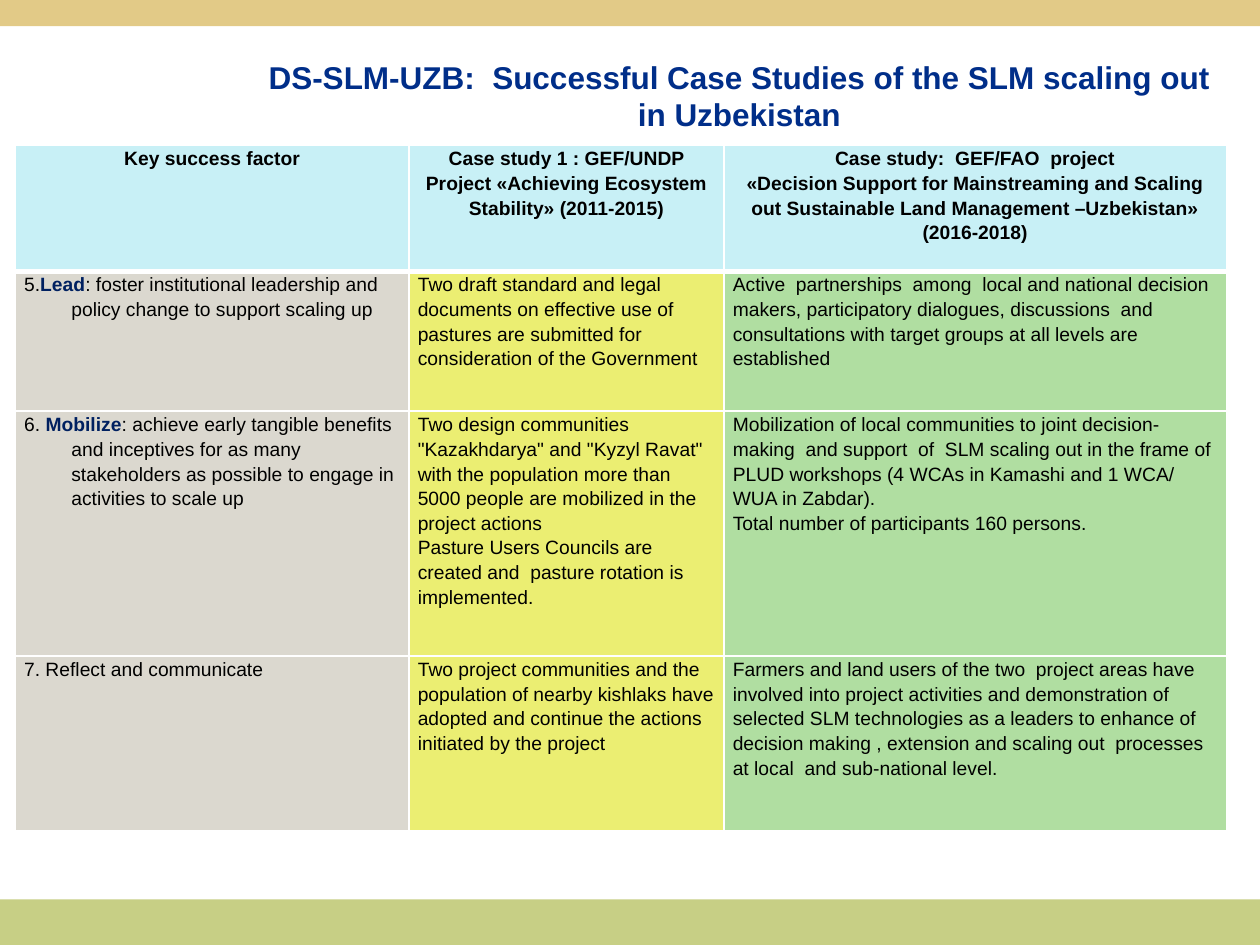
from lxml import etree
from pptx import Presentation
from pptx.dml.color import RGBColor
from pptx.enum.shapes import MSO_SHAPE
from pptx.enum.text import MSO_ANCHOR, PP_ALIGN
from pptx.oxml.ns import qn
from pptx.util import Pt

RECTANGLE = MSO_SHAPE.RECTANGLE
CENTER, LEFT = PP_ALIGN.CENTER, PP_ALIGN.LEFT
MIDDLE, TOP = MSO_ANCHOR.MIDDLE, MSO_ANCHOR.TOP

SAND = RGBColor(0xE2, 0xCA, 0x87)
OLIVE = RGBColor(0xC7, 0xCF, 0x85)
TITLE_BLUE = RGBColor(0x00, 0x2E, 0x89)
KEYWORD_BLUE = RGBColor(0x00, 0x20, 0x60)
BLACK = RGBColor(0x00, 0x00, 0x00)
WHITE = RGBColor(0xFF, 0xFF, 0xFF)
HEADER_CYAN = RGBColor(0xC8, 0xF0, 0xF6)
FACTOR_GREY = RGBColor(0xDB, 0xD8, 0xCF)
CASE_YELLOW = RGBColor(0xEB, 0xEE, 0x72)
CASE_GREEN = RGBColor(0xB0, 0xDE, 0xA1)

FONT = "Arial"
COLUMN_FILLS = (FACTOR_GREY, CASE_YELLOW, CASE_GREEN)
COLUMN_WIDTHS = (225, 180, 287)
ROW_HEIGHTS = (72, 80, 140, 100)
HANGING_INDENT = Pt(27)

TITLE = "DS-SLM-UZB:  Successful Case Studies of the SLM scaling out in Uzbekistan"
HEADERS = (
    [["Key success factor"]],
    [["Case study 1 : GEF/UNDP Project «Achieving Ecosystem Stability» (2011-2015)"]],
    [["Case study:  GEF/FAO  project"],
     ["«Decision Support for Mainstreaming and Scaling out Sustainable Land "
      "Management –Uzbekistan» (2016-2018)"]],
)
FACTORS = (
    ([["5.", "Lead", ": foster institutional leadership and policy change to support "
       "scaling up"]],
     [["Two draft standard and legal  documents on effective use of pastures are "
       "submitted for consideration of the Government"]],
     [["Active  partnerships  among  local and national decision makers, participatory "
       "dialogues, discussions  and consultations with target groups at all levels are "
       "established"]]),
    ([["6. ", "Mobilize", ": achieve early tangible benefits and inceptives for as many "
       "stakeholders as possible to engage in activities to scale up"]],
     [["Two design communities \"Kazakhdarya\" and \"Kyzyl Ravat\" with the population "
       "more than 5000 people are mobilized in the project actions"],
      ["Pasture Users Councils are created and  pasture rotation is implemented."]],
     [["Mobilization of local communities to joint decision-making  and support  of  SLM "
       "scaling out in the frame of  PLUD workshops (4 WCAs in Kamashi and 1 WCA/ WUA in "
       "Zabdar)."],
      ["Total number of participants 160 persons."]]),
    ([["7. Reflect and communicate"]],
     [["Two project communities and the population of nearby kishlaks have adopted and "
       "continue the actions initiated by the project"]],
     [["Farmers and land users of the two  project areas have involved into project "
       "activities and demonstration of selected SLM technologies as a leaders to enhance "
       "of  decision making , extension and scaling out  processes at local  and "
       "sub-national level."]]),
)


def style_font(font, size, color, bold):
    """Apply the slide's typeface with the given size, colour and weight."""
    font.name = FONT
    font.size = Pt(size)
    font.color.rgb = color
    font.bold = bold


def add_band(slide, left, top, width, height, color):
    """Draw a plain coloured band across the slide."""
    band = slide.shapes.add_shape(RECTANGLE, Pt(left), Pt(top), Pt(width), Pt(height))
    band.shadow.inherit = False
    band.fill.solid()
    band.fill.fore_color.rgb = color
    band.line.fill.background()


def place_title(slide, left, top, width, height):
    """Fill the title placeholder and move it into its box."""
    title = slide.shapes.title
    title.left, title.top, title.width, title.height = map(Pt, (left, top, width, height))
    frame = title.text_frame
    frame.text = TITLE
    frame.word_wrap = True
    frame.vertical_anchor = MIDDLE
    heading = frame.paragraphs[0]
    heading.alignment = CENTER
    style_font(heading.runs[0].font, 18, TITLE_BLUE, True)


def add_borders(cell, top_width, bottom_width):
    """Give a cell white borders, with its own top and bottom widths."""
    properties = cell._tc.get_or_add_tcPr()
    widths = {"a:lnL": 1, "a:lnR": 1, "a:lnT": top_width, "a:lnB": bottom_width}
    for side, width in widths.items():
        border = etree.SubElement(properties, qn(side), w=str(Pt(width)))
        solid = etree.SubElement(border, qn("a:solidFill"))
        etree.SubElement(solid, qn("a:srgbClr"), val=str(WHITE))


def write_cell(cell, paragraphs, is_header, is_factor):
    """Write paragraphs, each a list of runs whose second is the keyword."""
    cell.margin_left = cell.margin_right = Pt(5)
    cell.margin_top = cell.margin_bottom = 0
    cell.vertical_anchor = TOP
    frame = cell.text_frame
    frame.text = "\n".join("" for _ in paragraphs)
    for paragraph, parts in zip(frame.paragraphs, paragraphs):
        paragraph.alignment = CENTER if is_header else LEFT
        paragraph.line_spacing = 1.15
        if is_factor:
            properties = paragraph._p.get_or_add_pPr()
            properties.set("marL", str(HANGING_INDENT))
            properties.set("indent", str(-HANGING_INDENT))
        for position, part in enumerate(parts):
            is_keyword = position == 1
            run = paragraph.add_run()
            run.text = part
            style_font(run.font, 11, KEYWORD_BLUE if is_keyword else BLACK,
                       is_header or is_keyword)


def add_case_table(slide, left, top, width, height):
    """Add the table that compares the case studies by success factor."""
    rows = (HEADERS, *FACTORS)
    table = slide.shapes.add_table(len(rows), len(HEADERS), Pt(left), Pt(top),
                                   Pt(width), Pt(height)).table
    for column, column_width in zip(table.columns, COLUMN_WIDTHS):
        column.width = Pt(column_width)
    for row, row_height in zip(table.rows, ROW_HEIGHTS):
        row.height = Pt(row_height)
    for r, contents in enumerate(rows):
        is_header = r == 0
        for c, paragraphs in enumerate(contents):
            cell = table.cell(r, c)
            write_cell(cell, paragraphs, is_header, c == 0 and not is_header)
            add_borders(cell, 3 if r == 1 else 1, 3 if is_header else 1)
            cell.fill.solid()
            cell.fill.fore_color.rgb = HEADER_CYAN if is_header else COLUMN_FILLS[c]


def main():
    """Build and save the slide."""
    presentation = Presentation()
    presentation.slide_width, presentation.slide_height = Pt(720), Pt(540)
    slide = presentation.slides.add_slide(presentation.slide_layouts[5])
    add_band(slide, 0, 514, 720, 28, OLIVE)
    add_band(slide, 0, 0, 720, 15, SAND)
    place_title(slide, 144.5, 26, 556, 57)
    add_case_table(slide, 8.75, 83, sum(COLUMN_WIDTHS), sum(ROW_HEIGHTS))
    presentation.save("out.pptx")


if __name__ == "__main__":
    main()
